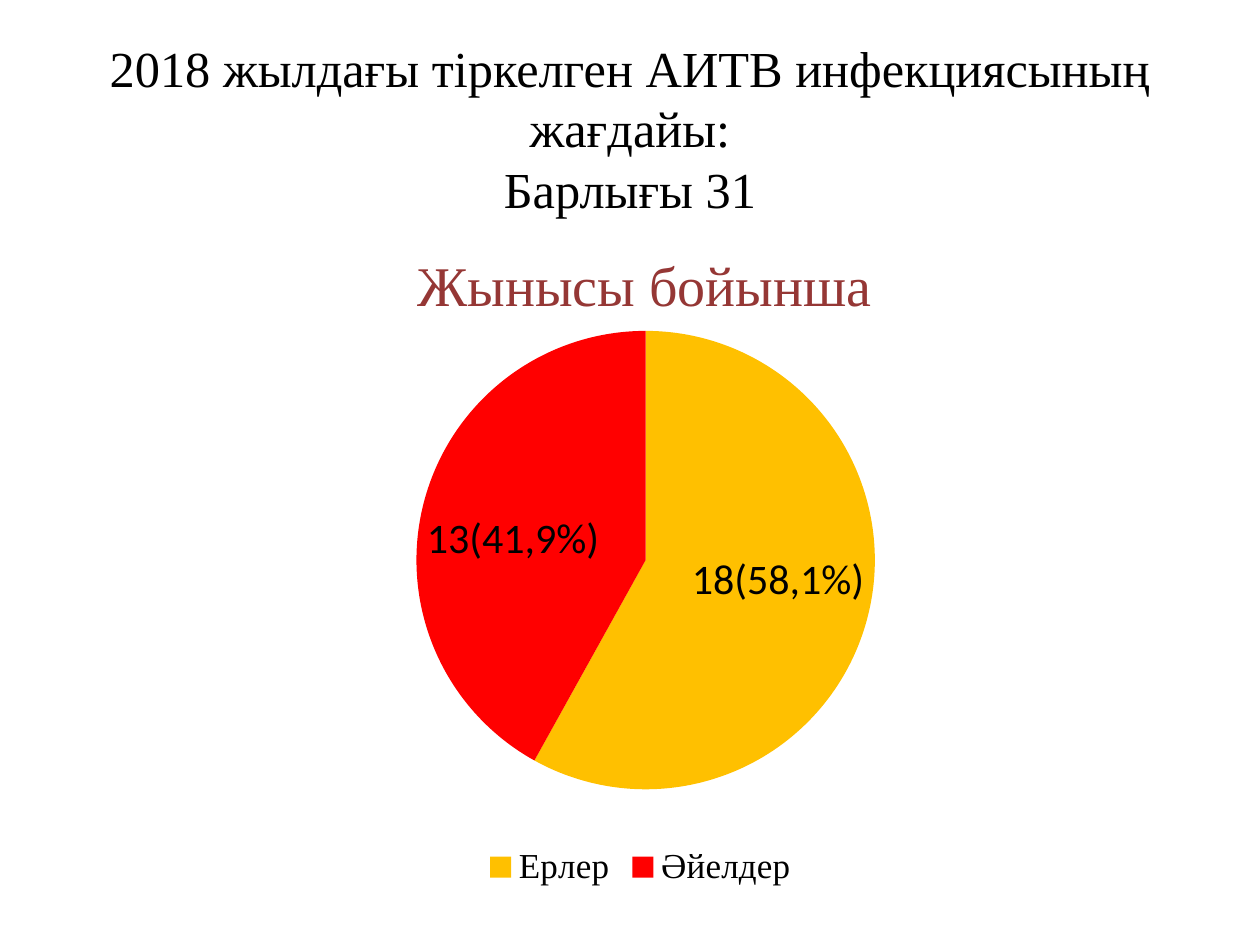
from dataclasses import dataclass
from lxml import etree
from pptx import Presentation
from pptx.chart.data import CategoryChartData
from pptx.dml.color import RGBColor
from pptx.enum.chart import XL_CHART_TYPE, XL_LABEL_POSITION, XL_LEGEND_POSITION
from pptx.enum.text import MSO_ANCHOR, PP_ALIGN
from pptx.oxml.ns import qn
from pptx.util import Cm, Pt


@dataclass(frozen=True)
class Theme:
    serif: str = "Times New Roman"
    sans: str = "Calibri"
    black: RGBColor = RGBColor(0, 0, 0)
    brown: RGBColor = RGBColor(0x95, 0x37, 0x35)
    gold: RGBColor = RGBColor(0xFF, 0xC0, 0)
    red: RGBColor = RGBColor(0xFF, 0, 0)
    head: Pt = Pt(28.8)
    sub: Pt = Pt(32)
    label: Pt = Pt(24)
    legend: Pt = Pt(20)
    base: Pt = Pt(18)


theme = Theme()


def style(font, name, size, color):
    font.name = name
    font.size = size
    font.color.rgb = color


def place(shape, left, top, width, height):
    shape.left, shape.top = Cm(left), Cm(top)
    shape.width, shape.height = Cm(width), Cm(height)


deck = Presentation()
deck.slide_width, deck.slide_height = Cm(25.4), Cm(19.05)
slide = deck.slides.add_slide(deck.slide_layouts[0])

title = slide.shapes.title
place(title, 1.9, 0.53, 21.6, 4.08)
title.text_frame.text = "2018 жылдағы тіркелген АИТВ инфекциясының жағдайы:\vБарлығы 31"
title.text_frame.vertical_anchor = MSO_ANCHOR.MIDDLE
line = title.text_frame.paragraphs[0]
line.alignment = PP_ALIGN.CENTER
style(line.font, theme.serif, theme.head, theme.black)

body = slide.placeholders[1]
place(body, 3.1, 4.93, 19.8, 11.2)
body.text_frame.text = "Жынысы бойынша"
line = body.text_frame.paragraphs[0]
line.alignment = PP_ALIGN.CENTER
style(line.font, theme.serif, theme.sub, theme.brown)

data = CategoryChartData()
data.categories = ["Ерлер", "Әйелдер"]
data.add_series("Series 1", [18, 13])
frame = slide.shapes.add_chart(
    XL_CHART_TYPE.PIE, Cm(2.31), Cm(6.32), Cm(21.2), Cm(11.7), data
)
chart = frame.chart
chart.has_title = False
style(chart.font, theme.sans, theme.base, theme.black)
chart.has_legend = True
chart.legend.position = XL_LEGEND_POSITION.BOTTOM
chart.legend.include_in_layout = False
style(chart.legend.font, theme.serif, theme.legend, theme.black)

pie = chart.plots[0]
pie.vary_by_categories = True
series = pie.series[0]
labels = series.data_labels
labels.show_value = True
labels.show_percentage = False
labels.show_category_name = False
labels.show_series_name = False
labels.show_legend_key = False
labels.position = XL_LABEL_POSITION.BEST_FIT
style(labels.font, theme.sans, theme.sub, theme.black)
slices = [(theme.gold, "18(58,1%)"), (theme.red, "13(41,9%)")]
for index, (color, text) in enumerate(slices):
    point = series.points[index]
    point.format.fill.solid()
    point.format.fill.fore_color.rgb = color
    label = point.data_label
    run = label.text_frame.paragraphs[0].add_run()
    run.text = text
    style(run.font, theme.sans, theme.label, theme.black)
    label.position = XL_LABEL_POSITION.BEST_FIT

area = chart.element.find(".//" + qn("c:plotArea"))
layout = area.find(qn("c:layout"))
if layout is None:
    layout = etree.Element(qn("c:layout"))
    area.insert(0, layout)
manual = etree.SubElement(layout, qn("c:manualLayout"))
rules = [
    ("layoutTarget", "inner"), ("xMode", "edge"), ("yMode", "edge"),
    ("x", "0.28"), ("y", "0.03"), ("w", "0.45"), ("h", "0.79"),
]
for name, value in rules:
    etree.SubElement(manual, qn("c:" + name)).set("val", value)

deck.save("out.pptx")
